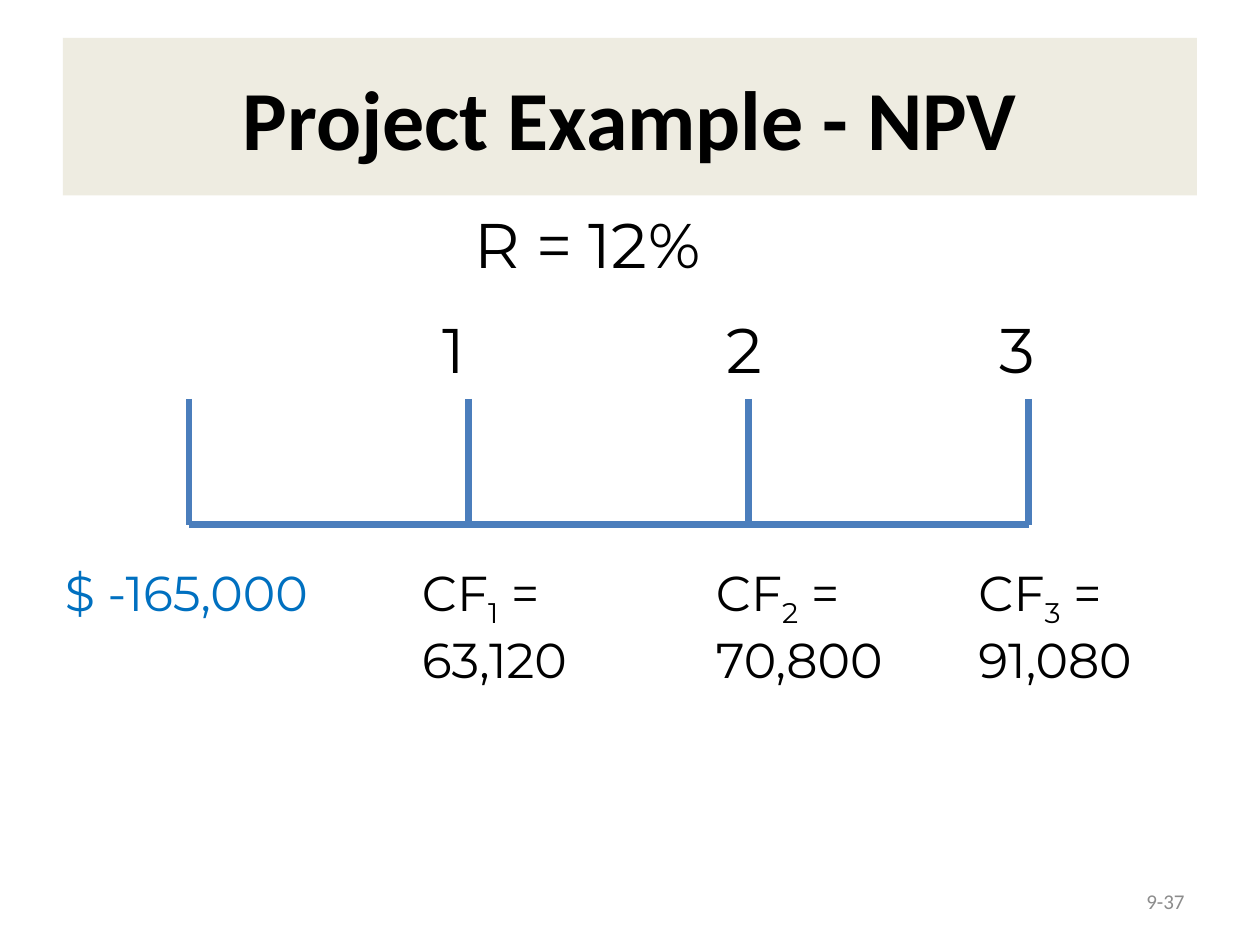
from pptx import Presentation
from pptx.dml.color import RGBColor
from pptx.enum.shapes import MSO_CONNECTOR, MSO_SHAPE
from pptx.enum.text import MSO_ANCHOR, PP_ALIGN
from pptx.util import Pt
from lxml.etree import SubElement
from pptx.oxml.ns import qn

COLORS = {
    "banner": "EEECE1",
    "text": "000000",
    "outlay": "0070C0",
    "timeline": "4B7EBC",
    "page": "8C8C8C",
}


class SlideBuilder:
    """Holds the slide and its style; lengths are in points."""

    def __init__(self, slide, font="Montserrat"):
        self.slide = slide
        self.font = font

    def color(self, name):
        return RGBColor.from_string(COLORS[name])

    def set_text(self, shape, runs, size, color="text", font=None, bold=False,
                 align=PP_ALIGN.LEFT, anchor=MSO_ANCHOR.TOP):
        """Fill a shape with one paragraph of (text, is_subscript) runs."""
        frame = shape.text_frame
        frame.word_wrap = True
        frame.vertical_anchor = anchor
        paragraph = frame.paragraphs[0]
        paragraph.alignment = align
        paragraph.font.name = font or self.font
        paragraph.font.size = Pt(size)
        paragraph.font.bold = bold
        paragraph.font.color.rgb = self.color(color)
        for text, is_subscript in runs:
            run = paragraph.add_run()
            run.text = text
            if is_subscript:
                run._r.get_or_add_rPr().set("baseline", "-25000")

    def text(self, left, top, width, height, runs, size, **style):
        if isinstance(runs, str):
            runs = [(runs, False)]
        box = self.slide.shapes.add_textbox(
            Pt(left), Pt(top), Pt(width), Pt(height))
        self.set_text(box, runs, size, **style)

    def banner(self, left, top, width, height, title):
        shape = self.slide.shapes.add_shape(
            MSO_SHAPE.RECTANGLE, Pt(left), Pt(top), Pt(width), Pt(height))
        shape.shadow.inherit = False
        shape.fill.solid()
        shape.fill.fore_color.rgb = self.color("banner")
        shape.line.fill.background()
        self.set_text(shape, [(title, False)], 48, font="Calibri", bold=True,
                      align=PP_ALIGN.CENTER, anchor=MSO_ANCHOR.MIDDLE)

    def line(self, x1, y1, x2, y2):
        connector = self.slide.shapes.add_connector(
            MSO_CONNECTOR.STRAIGHT, Pt(x1), Pt(y1), Pt(x2), Pt(y2))
        connector.line.color.rgb = self.color("timeline")
        connector.line.width = Pt(4)
        SubElement(connector._element.spPr, qn("a:effectLst"))


def main():
    presentation = Presentation()
    presentation.slide_width = Pt(720)
    presentation.slide_height = Pt(540)
    slide = presentation.slides.add_slide(presentation.slide_layouts[6])
    builder = SlideBuilder(slide)

    # Title, page number and discount rate
    builder.banner(36, 21.6, 648, 90, "Project Example - NPV")
    builder.text(516, 500.5, 168, 28.75, "9-37", 12, color="page",
                 font="Calibri", align=PP_ALIGN.RIGHT,
                 anchor=MSO_ANCHOR.MIDDLE)
    builder.text(264, 114, 216, 51, "R = 12%", 36)

    # Timeline with one tick per period
    start, step, tick_top, axis = 108, 160, 228, 300
    builder.line(start, axis, start + 3 * step, axis)
    for period in range(4):
        x = start + period * step
        builder.line(x, tick_top, x, axis)

    # Initial outlay
    cash_top = 318
    builder.text(30, cash_top, 174, 41, "$ -165,000", 28, color="outlay")

    # Period numbers and cash flows: label left, width; cash left, width
    periods = [
        ("1", 246, 48, "63,120", 234, 168),
        ("2", 408, 66, "70,800", 402, 120),
        ("3", 564, 60, "91,080", 552, 126),
    ]
    for number, left, width, amount, cash_left, cash_width in periods:
        builder.text(left, 174, width, 51, number, 36)
        cash_flow = [("CF", False), (number, True), (f" = {amount}", False)]
        builder.text(cash_left, cash_top, cash_width, 75, cash_flow, 28)

    presentation.save("out.pptx")


if __name__ == "__main__":
    main()
